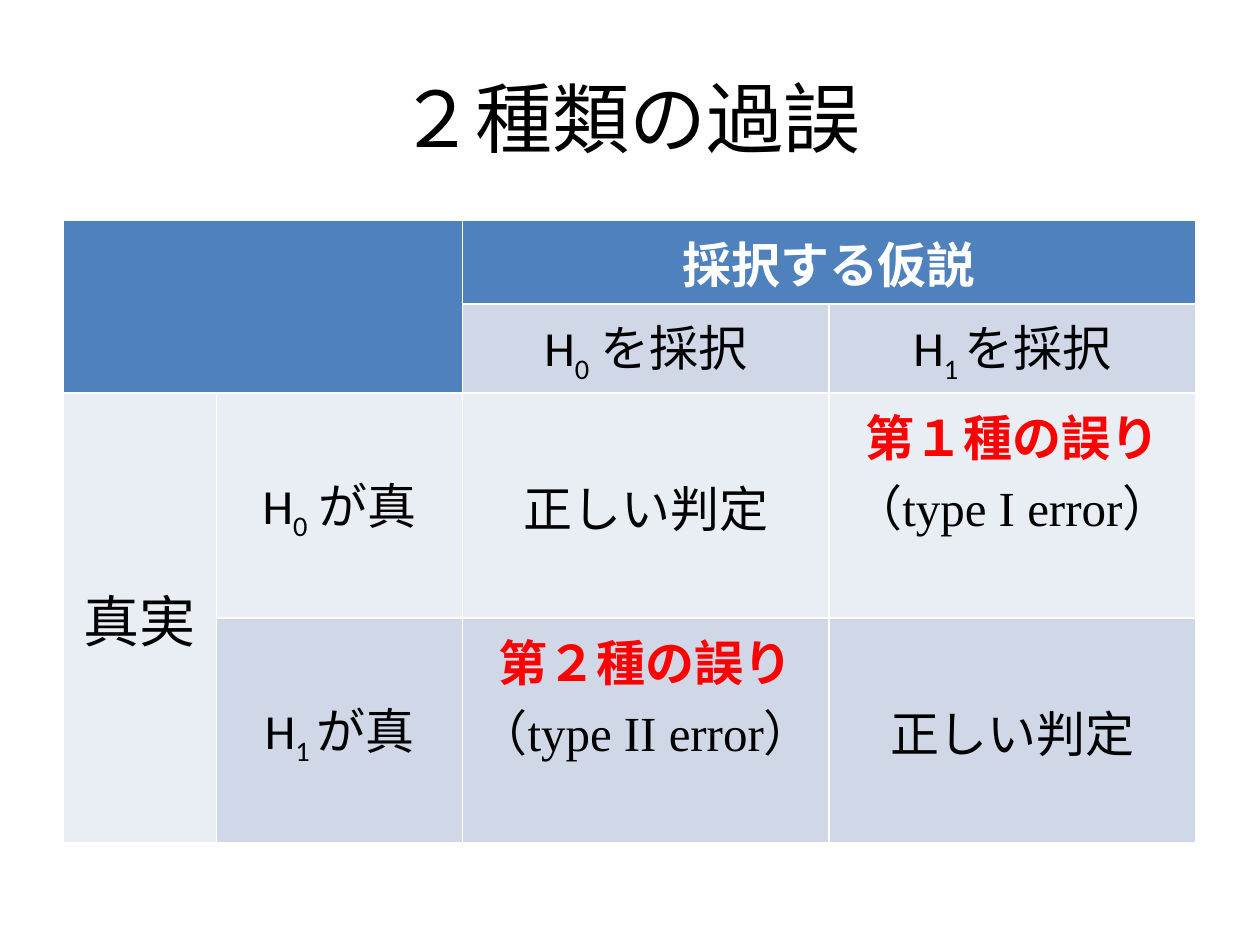
from pptx import Presentation
from pptx.dml.color import RGBColor
from pptx.enum.text import MSO_ANCHOR, PP_ALIGN
from pptx.util import Inches, Pt

CENTER = PP_ALIGN.CENTER
TOP, MIDDLE = MSO_ANCHOR.TOP, MSO_ANCHOR.MIDDLE
BLACK = RGBColor(0, 0, 0)
WHITE = RGBColor(255, 255, 255)
RED = RGBColor(255, 0, 0)
BLUE = RGBColor(0x4F, 0x81, 0xBD)
DARK = RGBColor(0xD0, 0xD8, 0xE8)
LIGHT = RGBColor(0xE9, 0xED, 0xF4)

BASE = {"name": "Calibri", "size": Pt(28), "bold": False, "color": BLACK}
STYLES = {
    "plain": {},
    "sub": {},
    "title": {"size": Pt(44)},
    "head": {"bold": True, "color": WHITE},
    "side": {"size": Pt(32)},
    "alert": {"bold": True, "color": RED},
    "latin": {"name": "Times New Roman"},
}


def add_run(para, text, style):
    run = para.add_run()
    run.text = text
    for key, value in {**BASE, **STYLES[style]}.items():
        if key == "color":
            run.font.color.rgb = value
        else:
            setattr(run.font, key, value)
    if style == "sub":
        run._r.get_or_add_rPr().set("baseline", "-25000")


def write(frame, lines):
    for i, line in enumerate(lines):
        para = frame.add_paragraph() if i else frame.paragraphs[0]
        para.alignment = CENTER
        for text, style in line:
            add_run(para, text, style)


def one(text, style="plain"):
    return [[(text, style)]]


def claim(sub, rest):
    return [[("H", "plain"), (sub, "sub"), (rest, "plain")]]


def fault(name, kind):
    return [
        [(name, "alert")],
        [("（", "plain"), (f"{kind} error", "latin"), ("）", "plain")],
    ]


def add_title(slide, box, text):
    title = slide.shapes.title
    title.left, title.top, title.width, title.height = map(Inches, box)
    title.text_frame.vertical_anchor = MIDDLE
    write(title.text_frame, one(text, "title"))


def add_grid(slide, box, cols, row, cells, spans):
    frame = slide.shapes.add_table(4, len(cols), *map(Inches, box))
    table = frame.table
    for col, width in zip(table.columns, cols):
        col.width = Inches(width)
    for line in table.rows:
        line.height = Inches(row)
    frame.height = Inches(box[3])
    for first, last in spans:
        table.cell(*first).merge(table.cell(*last))
    for place, fill, anchor, lines in cells:
        cell = table.cell(*place)
        cell.fill.solid()
        cell.fill.fore_color.rgb = fill
        cell.vertical_anchor = anchor
        write(cell.text_frame, lines)


def main():
    deck = Presentation()
    deck.slide_width, deck.slide_height = Inches(10), Inches(7.5)
    slide = deck.slides.add_slide(deck.slide_layouts[5])
    add_title(slide, (0.5, 0.3, 9, 1.25), "２種類の過誤")
    cells = [
        ((0, 0), BLUE, TOP, []),
        ((0, 2), BLUE, TOP, one("採択する仮説", "head")),
        ((1, 2), DARK, TOP, claim("0", " を採択")),
        ((1, 3), DARK, TOP, claim("1 ", "を採択")),
        ((2, 0), LIGHT, MIDDLE, one("真実", "side")),
        ((2, 1), LIGHT, MIDDLE, claim("0", " が真")),
        ((2, 2), LIGHT, MIDDLE, one("正しい判定")),
        ((2, 3), LIGHT, TOP, fault("第１種の誤り", "type I")),
        ((3, 1), DARK, MIDDLE, claim("1 ", "が真")),
        ((3, 2), DARK, TOP, fault("第２種の誤り", "type II")),
        ((3, 3), DARK, MIDDLE, one("正しい判定")),
    ]
    spans = [((0, 0), (1, 1)), ((0, 2), (0, 3)), ((2, 0), (3, 0))]
    cols = (1.22, 1.95, 2.91, 2.91)
    add_grid(slide, (0.5, 1.75, 9, 3.2), cols, 0.41, cells, spans)
    deck.save("out.pptx")


if __name__ == "__main__":
    main()
